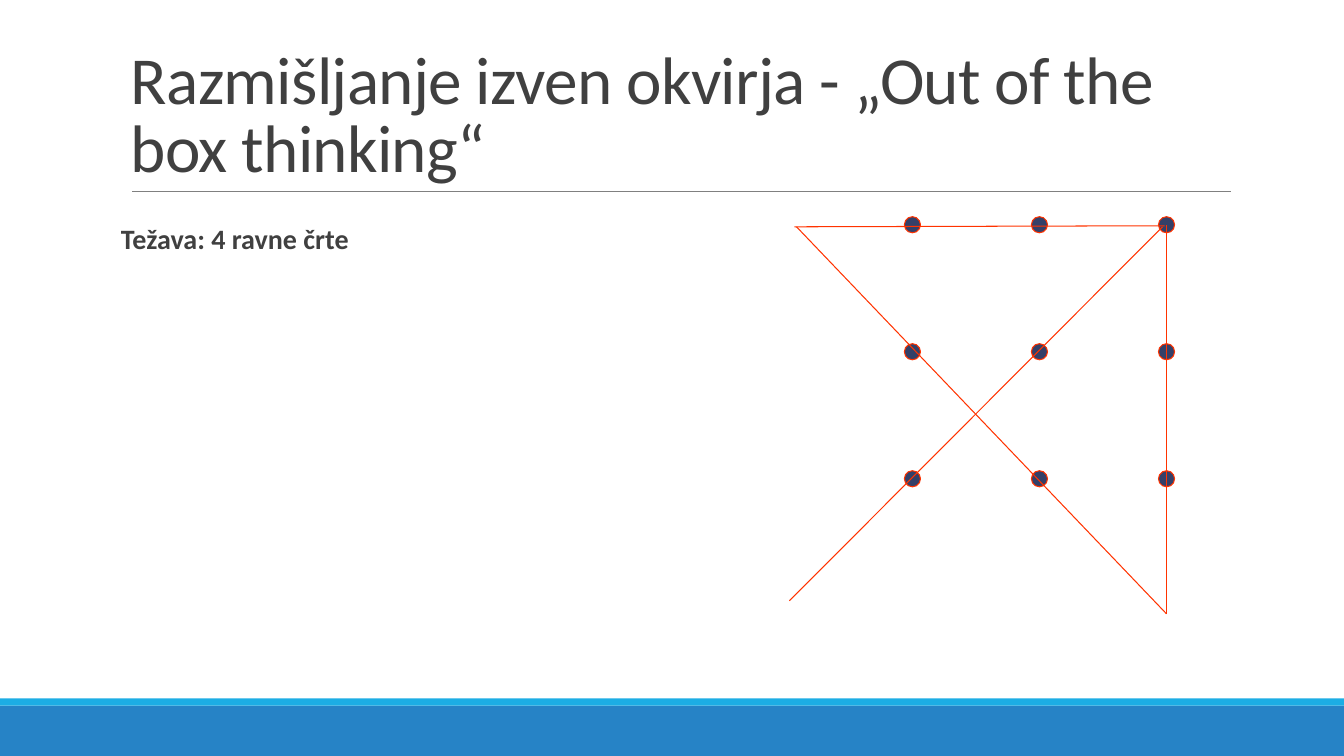
from itertools import product
from lxml.etree import SubElement
from pptx import Presentation
from pptx.dml.color import RGBColor
from pptx.enum.shapes import MSO_CONNECTOR, MSO_SHAPE
from pptx.enum.text import MSO_ANCHOR
from pptx.oxml.ns import qn
from pptx.util import Inches, Pt

HEX = {"band": "2683C6", "strip": "1CADE4", "rule": "808080",
       "text": "404040", "dot": "344068", "path": "FF3300"}
RGB = {name: RGBColor.from_string(code) for name, code in HEX.items()}
WIDE, HIGH = 13.33, 7.5

deck = Presentation()
deck.slide_width, deck.slide_height = Inches(WIDE), Inches(HIGH)
slide = deck.slides.add_slide(deck.slide_layouts[6])
shapes = slide.shapes


def add_form(kind, box, fill, line=None):
    form = shapes.add_shape(kind, *map(Inches, box))
    form.shadow.inherit = False
    form.fill.solid()
    form.fill.fore_color.rgb = RGB[fill]
    if line:
        form.line.color.rgb = RGB[line]
        form.line.width = Pt(0.75)
    else:
        form.line.fill.background()


def add_line(start, end, color, width):
    line = shapes.add_connector(MSO_CONNECTOR.STRAIGHT, *map(Inches, start + end))
    line.line.color.rgb = RGB[color]
    line.line.width = Pt(width)
    SubElement(line._element.spPr, qn("a:effectLst"))


# Footer bands and title rule
band, strip = 0.5, 0.07
add_form(MSO_SHAPE.RECTANGLE, (0, HIGH - band, WIDE, band), "band")
add_form(MSO_SHAPE.RECTANGLE, (0, HIGH - band - strip, WIDE, strip), "strip")
add_line((1.31, 1.9), (12.21, 1.9), "rule", 0.5)

# Title and task
texts = [
    {"text": "Razmišljanje izven okvirja - „Out of the box thinking“",
     "box": (1.2, 0.31, 11, 1.59), "side": 0.1, "anchor": MSO_ANCHOR.BOTTOM,
     "space": 0.85, "track": "-50", "font": {"size": Pt(48), "bold": False}},
    {"text": "Težava: 4 ravne črte",
     "box": (1.2, 2.19, 5.57, 2.48), "side": 0, "anchor": MSO_ANCHOR.TOP,
     "space": 0.9, "track": "0", "font": {"size": Pt(20), "bold": True}},
]
for item in texts:
    frame = shapes.add_textbox(*map(Inches, item["box"])).text_frame
    look = {"word_wrap": True, "vertical_anchor": item["anchor"],
            "margin_left": Inches(item["side"]), "margin_right": Inches(item["side"])}
    for key, value in look.items():
        setattr(frame, key, value)
    para = frame.paragraphs[0]
    para.line_spacing = item["space"]
    run = para.add_run()
    run.text = item["text"]
    for key, value in {"name": "Calibri", **item["font"]}.items():
        setattr(run.font, key, value)
    run.font.color.rgb = RGB["text"]
    run._r.get_or_add_rPr().set("spc", item["track"])

# Nine dots on a square grid
left, top, step, size = 8.97, 2.15, 1.26, 0.16
for row, col in product(range(3), repeat=2):
    box = (left + col * step, top + row * step, size, size)
    add_form(MSO_SHAPE.OVAL, box, "dot", "path")

# Four straight lines through the dots
paths = [((7.83, 5.96), (11.53, 2.25)), ((11.57, 6.09), (11.57, 2.23)),
         ((11.57, 6.09), (7.9, 2.25)), ((11.55, 2.24), (7.88, 2.25))]
for start, end in paths:
    add_line(start, end, "path", 0.75)

deck.save("out.pptx")
